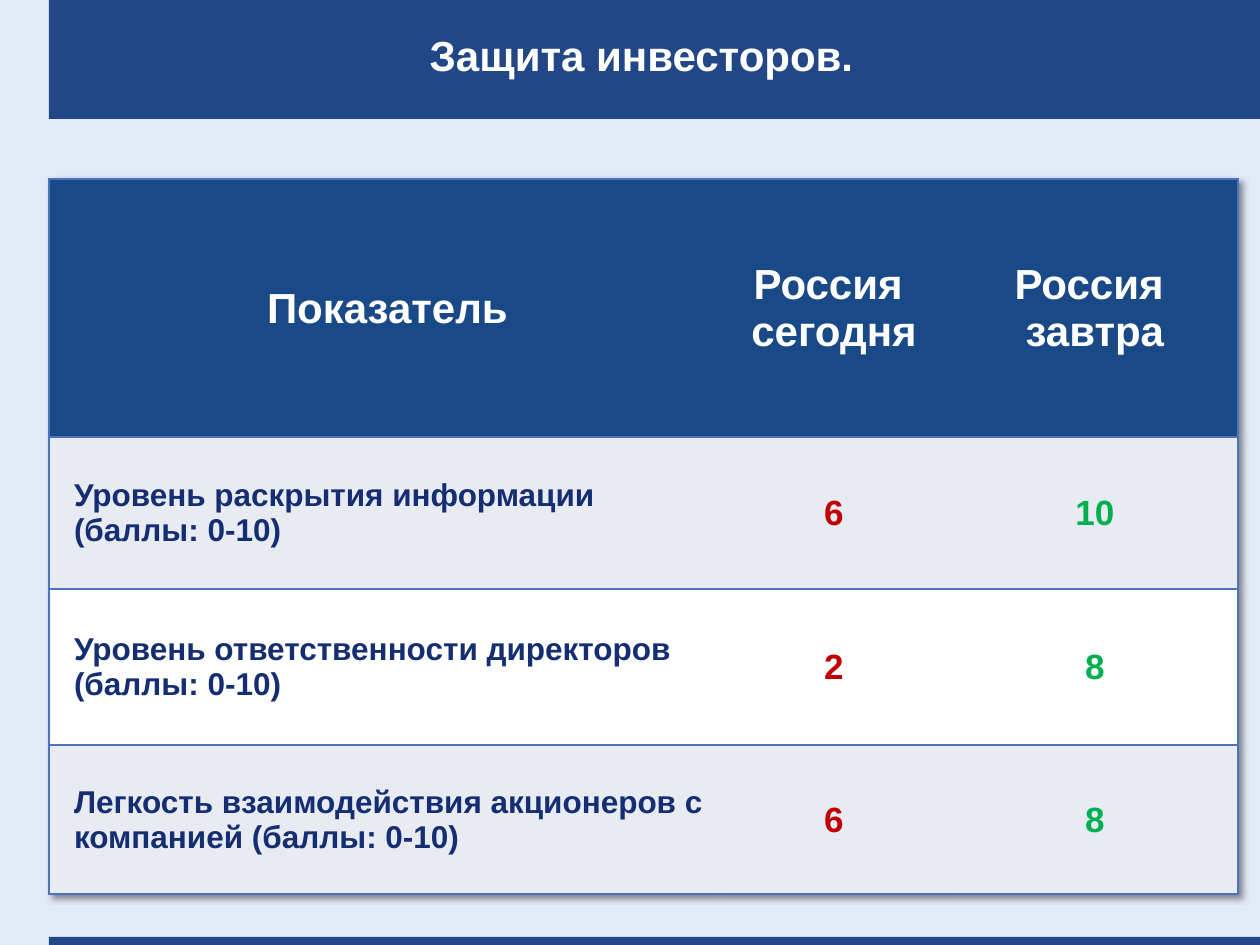
from lxml import etree
from pptx import Presentation
from pptx.dml.color import RGBColor
from pptx.enum.shapes import MSO_SHAPE
from pptx.enum.text import MSO_ANCHOR, PP_ALIGN
from pptx.oxml.ns import qn
from pptx.util import Emu, Pt

RECTANGLE = MSO_SHAPE.RECTANGLE
MIDDLE = MSO_ANCHOR.MIDDLE
LEFT, CENTER = PP_ALIGN.LEFT, PP_ALIGN.CENTER
EMU_PER_PX = 914400 / 126
NO_STYLE = "{2D5ABB26-0587-4C30-8999-92F81FD0307C}"

BAR, HEADER, BORDER = "214786", "194986", "4D74BB"
BAND, WHITE, LABEL = "E9EBF3", "FFFFFF", "142E71"
TODAY, TOMORROW = "C00000", "00B050"

HEADINGS = [["Показатель"], ["Россия ", "сегодня"], ["Россия ", "завтра"]]
INDICATORS = [
    ("Уровень раскрытия информации (баллы: 0-10)", "6", "10"),
    ("Уровень ответственности директоров (баллы: 0-10)", "2", "8"),
    ("Легкость взаимодействия акционеров с компанией (баллы: 0-10)", "6", "8"),
]


def px(length):
    return Emu(round(length * EMU_PER_PX))


def color(value):
    return RGBColor.from_string(value)


def add_child(parent, tag, **attributes):
    return etree.SubElement(parent, qn(tag), {k: str(v) for k, v in attributes.items()})


def make_shadow(blur, distance, angle, alpha):
    effects = etree.Element(qn("a:effectLst"))
    shadow = add_child(effects, "a:outerShdw", blurRad=px(blur), dist=px(distance),
                       dir=angle * 60000, algn="tl", rotWithShape=0)
    black = add_child(shadow, "a:srgbClr", val="000000")
    add_child(black, "a:alpha", val=alpha * 1000)
    return effects


class SlideBuilder:
    font = "Arial"

    def __init__(self, deck, background):
        self.page = deck.slides.add_slide(deck.slide_layouts[6])
        self.page.background.fill.solid()
        self.page.background.fill.fore_color.rgb = color(background)

    def bar(self, left, top, width, height, fill):
        shape = self.page.shapes.add_shape(
            RECTANGLE, px(left), px(top), px(width), px(height))
        shape.shadow.inherit = False
        shape.fill.solid()
        shape.fill.fore_color.rgb = color(fill)
        shape.line.fill.background()

    def span(self, para, text, size, ink, align=CENTER):
        para.alignment = align
        span = para.add_run()
        span.text = text
        span.font.size = Pt(size)
        span.font.bold = True
        span.font.color.rgb = color(ink)
        span.font.name = self.font
        return span

    def title(self, left, top, width, height, text):
        box = self.page.shapes.add_textbox(px(left), px(top), px(width), px(height))
        frame = box.text_frame
        frame.word_wrap = True
        frame.vertical_anchor = MIDDLE
        frame.margin_left = px(25)
        frame.margin_right = frame.margin_top = frame.margin_bottom = 0
        para = frame.paragraphs[0]
        para.line_spacing = 0.8
        span = self.span(para, text, 24, WHITE)
        span._r.rPr.find(qn("a:solidFill")).addnext(make_shadow(0, 4, 45, 100))

    def table(self, left, top, widths, heights):
        frame = self.page.shapes.add_table(
            len(heights), len(widths), px(left), px(top), px(sum(widths)), px(sum(heights)))
        table = frame.table
        table.first_row = table.horz_banding = False
        properties = table._tbl.tblPr
        properties.find(qn("a:tableStyleId")).text = NO_STYLE
        properties.insert(0, make_shadow(6, 5, 45, 45))
        for column, width in zip(table.columns, widths):
            column.width = px(width)
        for row, height in zip(table.rows, heights):
            row.height = px(height)
        return table

    def cell(self, cell, lines, size, ink, fill, sides, align=CENTER, indent=0):
        cell.margin_left = cell.margin_right = cell.margin_top = px(1)
        cell.margin_bottom = 0
        cell.vertical_anchor = MIDDLE
        cell.fill.solid()
        cell.fill.fore_color.rgb = color(fill)
        frame = cell.text_frame
        for index, text in enumerate(lines):
            para = frame.add_paragraph() if index else frame.paragraphs[0]
            self.span(para, text, size, ink, align)
            if indent:
                para._p.get_or_add_pPr().set("marL", str(px(indent)))
        properties = cell._tc.get_or_add_tcPr()
        for index, side in enumerate(sides):
            line = etree.Element(qn(f"a:ln{side}"), {"w": str(Pt(1))})
            add_child(add_child(line, "a:solidFill"), "a:srgbClr", val=BORDER)
            properties.insert(index, line)


def main():
    deck = Presentation()
    deck.slide_width, deck.slide_height = px(1260), px(945)
    builder = SlideBuilder(deck, "E3EBF8")
    builder.bar(49, 0, 1211, 119, BAR)
    builder.bar(49, 937, 1211, 10, BAR)

    table = builder.table(49, 179, [667, 236, 286], [258, 152, 156, 149])
    sides = ["LTB", "TB", "RTB"]
    for column, lines in enumerate(HEADINGS):
        builder.cell(table.cell(0, column), lines, 24, WHITE, HEADER, sides[column],
                     indent=0 if column else 10)
    for row, (label, today, tomorrow) in enumerate(INDICATORS, 1):
        fill = BAND if row % 2 else WHITE
        builder.cell(table.cell(row, 0), [label], 18, LABEL, fill, sides[0], LEFT, 24)
        builder.cell(table.cell(row, 1), [today], 20, TODAY, fill, sides[1])
        builder.cell(table.cell(row, 2), [tomorrow], 20, TOMORROW, fill, sides[2])

    builder.title(49, 0, 1160, 119, "Защита инвесторов.")
    deck.save("out.pptx")


if __name__ == "__main__":
    main()
